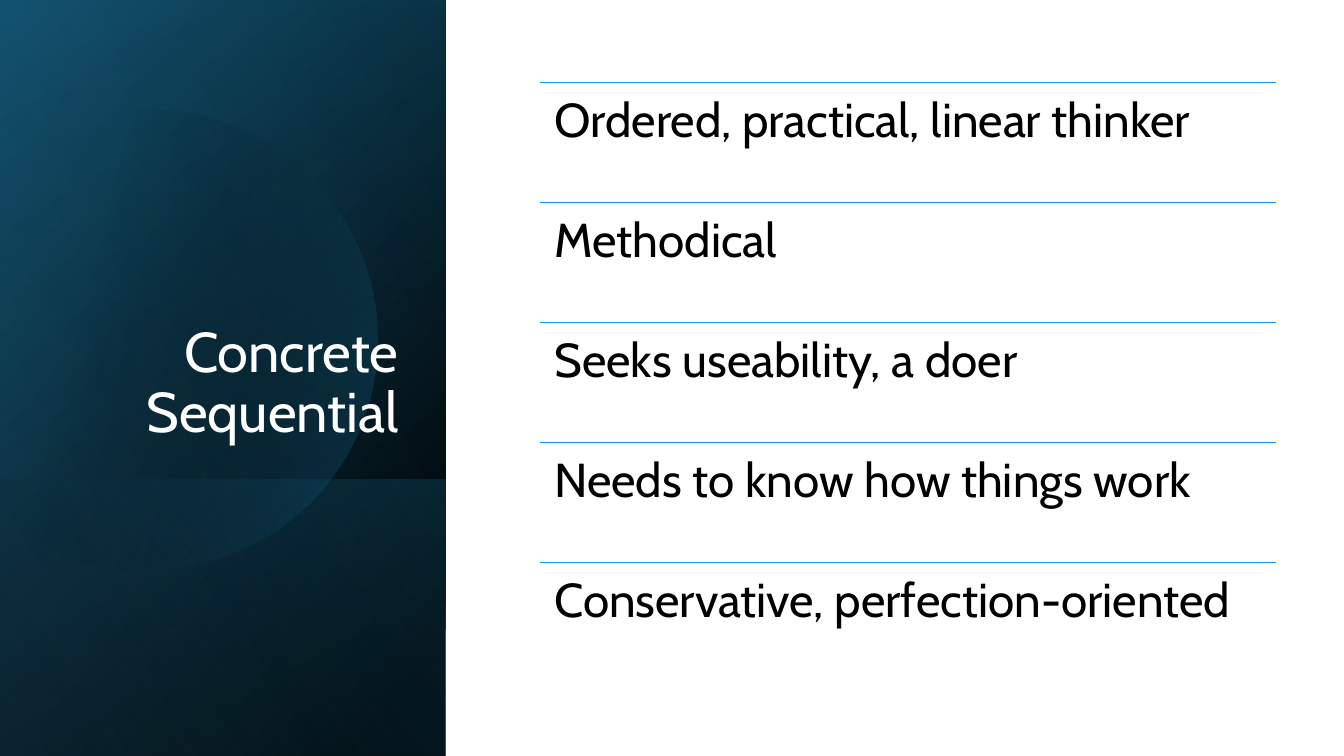
from math import cos, radians, sin

from lxml.etree import SubElement
from pptx import Presentation
from pptx.dml.color import RGBColor
from pptx.enum.shapes import MSO_CONNECTOR, MSO_SHAPE
from pptx.enum.text import MSO_ANCHOR, PP_ALIGN
from pptx.oxml.ns import qn
from pptx.util import Inches, Pt

TITLE = "Concrete Sequential"
TRAITS = [
    "Ordered, practical, linear thinker",
    "Methodical",
    "Seeks useability, a doer",
    "Needs to know how things work",
    "Conservative, perfection-oriented",
]

BLACK = RGBColor(0x00, 0x00, 0x00)
WHITE = RGBColor(0xFF, 0xFF, 0xFF)
NAVY = RGBColor(0x10, 0x48, 0x62)
TEAL = RGBColor(0x15, 0x60, 0x82)
SKY = RGBColor(0x46, 0xB1, 0xE1)
RULE = RGBColor(0x0F, 0x9E, 0xD5)

FULL_PANEL = (-1.54, 1.54, 7.5, 4.42)
LOWER_PANEL = (0.84, 3.92, 2.74, 4.42)
BASE_LAYERS = [
    (FULL_PANEL, 50, [(8, BLACK, 100), (100, NAVY, 100)]),
    (FULL_PANEL, 30, [(0, BLACK, 0), (99, TEAL, 46)]),
    (LOWER_PANEL, 130, [(2, TEAL, 29), (100, BLACK, 30)]),
]
GLOW_STOPS = [(29, BLACK, 0), (100, TEAL, 43)]
TOP_LAYER = (FULL_PANEL, 120, [(0, BLACK, 0), (99, SKY, 11)])

GLOW_X, GLOW_Y, GLOW_RADIUS = 1.46, 3.37, 2.28
LIST_LEFT, LIST_TOP, LIST_WIDTH, ROW_HEIGHT = 5.36, 0.82, 7.3, 1.19

prs = Presentation()
prs.slide_width, prs.slide_height = Inches(13.33), Inches(7.5)
slide = prs.slides.add_slide(prs.slide_layouts[6])
shapes = slide.shapes


def paint_gradient(shape, angle, stops):
    shape.shadow.inherit = False
    shape.line.fill.background()
    shape.fill.background()
    properties = shape._element.spPr
    blank = properties.find(qn("a:noFill"))
    gradient = SubElement(properties, qn("a:gradFill"), rotWithShape="1")
    stop_list = SubElement(gradient, qn("a:gsLst"))
    for position, color, opacity in stops:
        stop = SubElement(stop_list, qn("a:gs"), pos=str(position * 1000))
        tint = SubElement(stop, qn("a:srgbClr"), val=str(color))
        SubElement(tint, qn("a:alpha"), val=str(opacity * 1000))
    SubElement(gradient, qn("a:lin"), ang=str(angle * 60000), scaled="0")
    properties.replace(blank, gradient)


def add_layer(box, angle, stops):
    layer = shapes.add_shape(MSO_SHAPE.RECTANGLE, *map(Inches, box))
    layer.rotation = 90
    layer._element.spPr.find(qn("a:xfrm")).set("flipH", "1")
    paint_gradient(layer, angle, stops)


def add_text(text, box, size, color, align=PP_ALIGN.LEFT,
             anchor=MSO_ANCHOR.TOP, insets=(0.1, 0.05)):
    frame = shapes.add_textbox(*map(Inches, box)).text_frame
    frame.word_wrap = True
    frame.vertical_anchor = anchor
    frame.margin_left = frame.margin_right = Inches(insets[0])
    frame.margin_top = frame.margin_bottom = Inches(insets[1])
    paragraph = frame.paragraphs[0]
    paragraph.alignment = align
    paragraph.line_spacing = 0.9
    run = paragraph.add_run()
    run.text = text
    run.font.name = "Cabin"
    run.font.size = Pt(size)
    run.font.color.rgb = color


for layer in BASE_LAYERS:
    add_layer(*layer)

arc = [
    (Inches(GLOW_X + GLOW_RADIUS * cos(radians(turn))),
     Inches(GLOW_Y + GLOW_RADIUS * sin(radians(turn))))
    for turn in range(-135, 136, 3)
]
outline = shapes.build_freeform(*arc[0])
outline.add_line_segments(arc[1:], close=True)
paint_gradient(outline.convert_to_shape(), 14, GLOW_STOPS)

add_layer(*TOP_LAYER)
add_text(TITLE, (0.64, 1.84, 3.41, 2.62), 40, WHITE,
         align=PP_ALIGN.RIGHT, anchor=MSO_ANCHOR.BOTTOM)

for row, trait in enumerate(TRAITS):
    top = LIST_TOP + row * ROW_HEIGHT
    rule = shapes.add_connector(
        MSO_CONNECTOR.STRAIGHT, Inches(LIST_LEFT), Inches(top),
        Inches(LIST_LEFT + LIST_WIDTH), Inches(top))
    rule.line.color.rgb = RULE
    rule.line.width = Pt(1)
    SubElement(rule._element.spPr, qn("a:effectLst"))
    add_text(trait, (LIST_LEFT, top, LIST_WIDTH, ROW_HEIGHT), 34, BLACK,
             insets=(0.14, 0.14))

prs.save("out.pptx")
